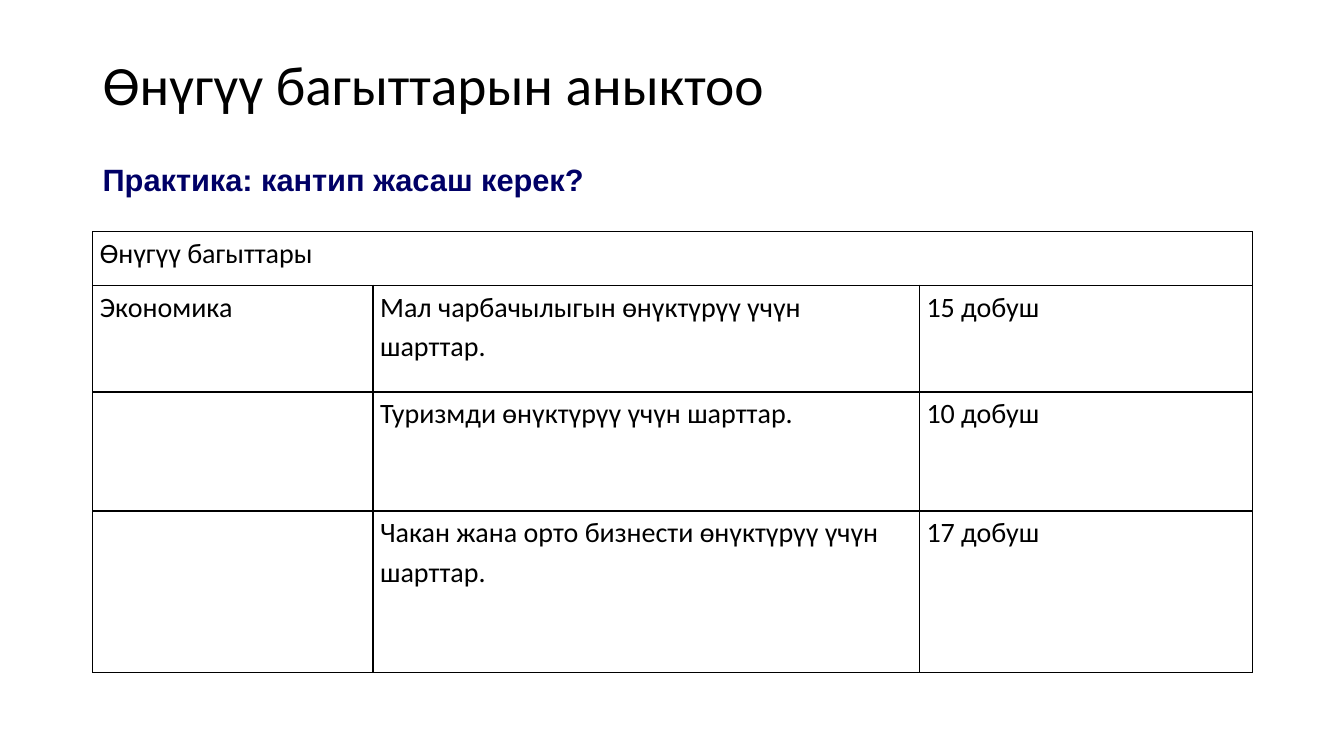
import pptx
import pptx.util
import pptx.dml.color
import pptx.enum.text
from lxml import etree
from pptx.oxml.ns import qn

SCALE = 9144  # EMU in one px, 100 px to the inch
COLORS = {"ink": "000000", "navy": "000066"}
ANCHOR = pptx.enum.text.MSO_ANCHOR
ALIGN = pptx.enum.text.PP_ALIGN
FIT = pptx.enum.text.MSO_AUTO_SIZE

ROWS = [
    ["Өнүгүү багыттары", "", ""],
    ["Экономика", "Мал чарбачылыгын өнүктүрүү үчүн шарттар.", "15 добуш"],
    ["", "Туризмди өнүктүрүү үчүн шарттар.", "10 добуш"],
    ["", "Чакан жана орто бизнести өнүктүрүү үчүн шарттар.", "17 добуш"],
]


def px(*sizes):
    return [pptx.util.Emu(size * SCALE) for size in sizes]


def apply(target, values):
    for name, value in values.items():
        setattr(target, name, value)


class Deck:
    styles = {
        "title": {"name": "Calibri", "size": pptx.util.Pt(39.6), "bold": False},
        "lead": {"name": "Arial", "size": pptx.util.Pt(22), "bold": True},
        "cell": {"name": "Calibri", "size": pptx.util.Pt(20), "bold": False},
    }

    def __init__(self, width, height):
        self.file = pptx.Presentation()
        apply(self.file, dict(zip(("slide_width", "slide_height"), px(width, height))))
        self.slide = self.file.slides.add_slide(self.file.slide_layouts[5])

    def text(self, frame, words, style, color="ink", space=1.0):
        par = frame.paragraphs[0]
        apply(par, {"text": words, "line_spacing": space, "alignment": ALIGN.LEFT})
        apply(par.font, self.styles[style])
        for run in par.runs:
            apply(run.font, self.styles[style])
            run.font.color.rgb = pptx.dml.color.RGBColor.from_string(COLORS[color])

    def title(self, words, *box):
        shape = self.slide.shapes.title
        apply(shape, dict(zip(("left", "top", "width", "height"), px(*box))))
        apply(shape.text_frame, {"vertical_anchor": ANCHOR.MIDDLE, "word_wrap": True,
                                 "auto_size": FIT.NONE})
        self.text(shape.text_frame, words, "title", space=0.9)

    def label(self, words, *box):
        frame = self.slide.shapes.add_textbox(*px(*box)).text_frame
        apply(frame, {"word_wrap": True, "auto_size": FIT.SHAPE_TO_FIT_TEXT})
        self.text(frame, words, "lead", "navy")

    def border(self, cell):
        """Draw a 1 pt line on all four sides of the cell."""
        props = cell._tc.get_or_add_tcPr()
        for spot, side in enumerate(("lnL", "lnR", "lnT", "lnB")):
            line = etree.Element(qn("a:" + side), w=str(pptx.util.Pt(1)))
            fill = etree.SubElement(line, qn("a:solidFill"))
            etree.SubElement(fill, qn("a:srgbClr"), val=COLORS["ink"])
            props.insert(spot, line)

    def table(self, rows, left, top, widths, heights):
        box = px(left, top, sum(widths), sum(heights))
        grid = self.slide.shapes.add_table(len(rows), len(widths), *box).table
        apply(grid, {"first_row": False, "horz_banding": False})
        for col, width in zip(grid.columns, px(*widths)):
            col.width = width
        for row, height in zip(grid.rows, px(*heights)):
            row.height = height
        side, none = px(7, 0)
        inset = {"margin_left": side, "margin_right": side,
                 "margin_top": none, "margin_bottom": none}
        for row, line in zip(grid.rows, rows):
            for cell, words in zip(row.cells, line):
                apply(cell, inset)
                cell.fill.background()
                self.border(cell)
                self.text(cell.text_frame, words, "cell", space=1.15)
        grid.cell(0, 0).merge(grid.cell(0, len(widths) - 1))


def main():
    deck = Deck(1333, 750)
    deck.title("Өнүгүү багыттарын аныктоо", 92, 40, 1150, 94)
    deck.label("Практика: кантип жасаш керек?", 92, 155, 509, 47)
    deck.table(ROWS, 92, 230, [278, 542, 330], [53, 106, 118, 160])
    deck.file.save("out.pptx")


if __name__ == "__main__":
    main()
